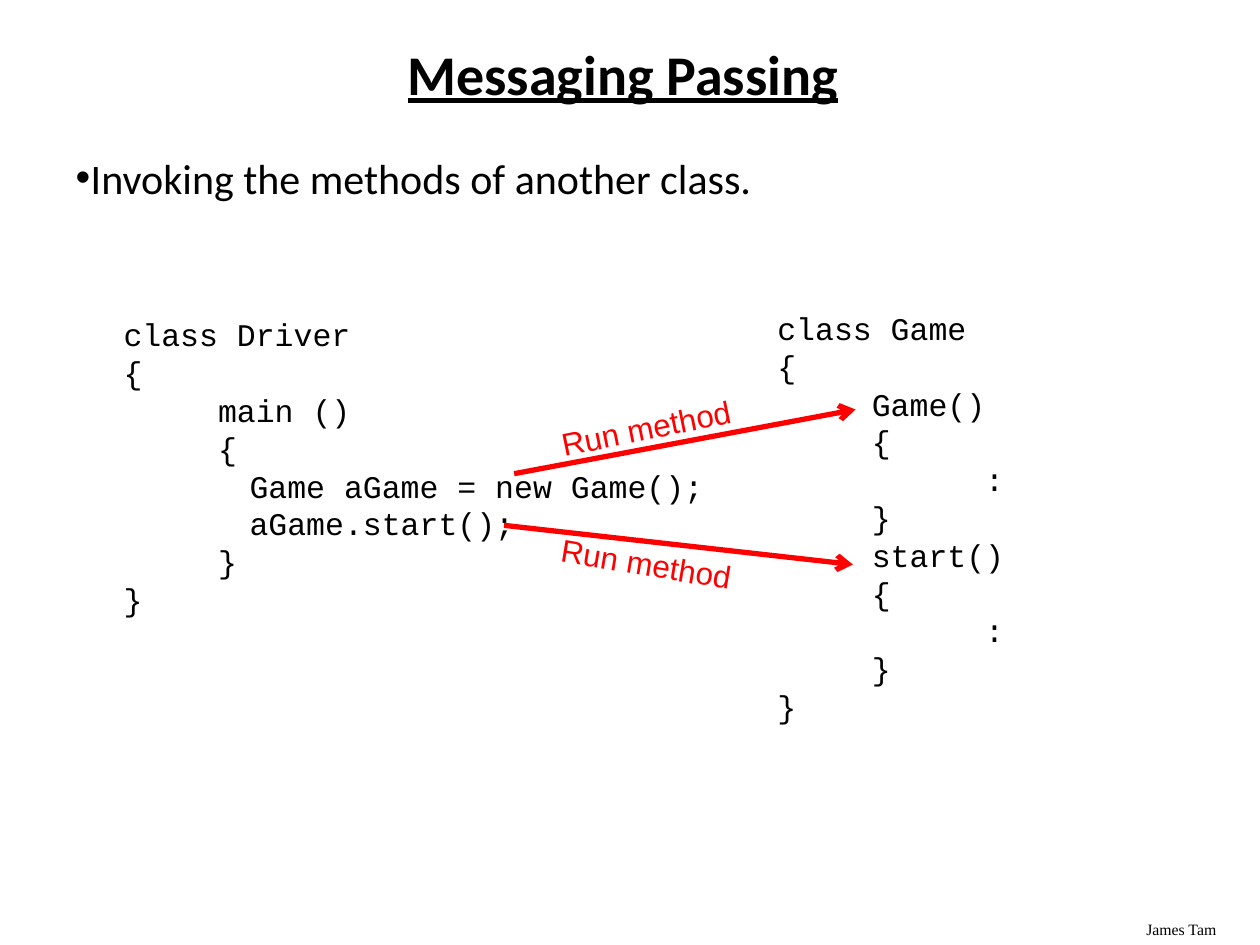
from lxml.etree import SubElement
from pptx import Presentation
from pptx.dml.color import RGBColor
from pptx.enum.shapes import MSO_CONNECTOR
from pptx.enum.text import MSO_ANCHOR, PP_ALIGN
from pptx.oxml.ns import qn
from pptx.util import Pt

BLACK = RGBColor(0x00, 0x00, 0x00)
RED = RGBColor(0xFF, 0x00, 0x00)


def format_paragraph(paragraph, font_name, size, color=BLACK):
    paragraph.font.name = font_name
    paragraph.font.size = Pt(size)
    paragraph.font.color.rgb = color


def add_text_box(shapes, left, top, width, height, left_margin=0):
    box = shapes.add_textbox(Pt(left), Pt(top), Pt(width), Pt(height))
    box.text_frame.word_wrap = True
    box.text_frame.margin_left = Pt(left_margin)
    return box


presentation = Presentation()
presentation.slide_width = Pt(720)
presentation.slide_height = Pt(540)
slide = presentation.slides.add_slide(presentation.slide_layouts[1])

# Footer
footer = add_text_box(slide.shapes, 648, 522, 72, 18, left_margin=7.2)
footer.text_frame.text = "James Tam"
format_paragraph(footer.text_frame.paragraphs[0], "Times New Roman", 9)

# Title
title = slide.shapes.title
title.left, title.top, title.width, title.height = Pt(32), Pt(8), Pt(648), Pt(72)
title.text_frame.text = "Messaging Passing"
title.text_frame.vertical_anchor = MSO_ANCHOR.MIDDLE
paragraph = title.text_frame.paragraphs[0]
paragraph.alignment = PP_ALIGN.CENTER
paragraph.line_spacing = 0.9
paragraph.font.bold = True
paragraph.font.underline = True
format_paragraph(paragraph, "Calibri", 32)

# Bullet list
body = slide.placeholders[1]
body.left, body.top, body.width, body.height = Pt(36), Pt(89), Pt(648), Pt(60)
body.text_frame.text = "Invoking the methods of another class."
paragraph = body.text_frame.paragraphs[0]
paragraph.alignment = PP_ALIGN.LEFT
paragraph.line_spacing = 0.8
paragraph.space_before = Pt(0)
format_paragraph(paragraph, "Calibri", 24)
properties = paragraph._p.get_or_add_pPr()
properties.set("marL", str(Pt(8.64)))
properties.set("indent", str(Pt(-8.64)))
SubElement(properties, qn("a:buChar"), char="•")

# Code listings: each line has its indent in points
METHOD, STATEMENT, ELLIPSIS = 54, 72, 118.8
driver_lines = [
    (0, "class Driver"),
    (0, "{"),
    (METHOD, "main ()"),
    (METHOD, "{"),
    (STATEMENT, "Game aGame = new Game();"),
    (STATEMENT, "aGame.start();"),
    (METHOD, "}"),
    (0, "}"),
]
game_lines = [(0, "class Game"), (0, "{")]
for method in ("Game()", "start()"):
    game_lines += [(METHOD, method), (METHOD, "{"), (ELLIPSIS, ":"), (METHOD, "}")]
game_lines.append((0, "}"))

for left, top, width, lines in [
    (70.6, 174.2, 338.4, driver_lines),
    (444.2, 170.6, 246.2, game_lines),
]:
    code = add_text_box(slide.shapes, left, top, width, 260.6)
    code.text_frame.margin_top = Pt(6)
    code.text_frame.text = "\n".join(text for _, text in lines)
    for paragraph, (indent, _) in zip(code.text_frame.paragraphs, lines):
        paragraph.line_spacing = Pt(21.6)
        paragraph._p.get_or_add_pPr().set("marL", str(Pt(indent)))
        format_paragraph(paragraph, "Courier New", 18)

# Calls from Driver to Game: arrow ends, label corner, label rotation
for start, end, label_corner, rotation in [
    ((293.8, 270.7), (488.9, 234), (320.4, 227.5), 348.5),
    ((288, 300.2), (487.4, 322.6), (319.7, 309.6), 9.5),
]:
    call = slide.shapes.add_group_shape()
    arrow = call.shapes.add_connector(
        MSO_CONNECTOR.STRAIGHT, *(Pt(value) for value in start + end)
    )
    arrow.line.color.rgb = RED
    arrow.line.width = Pt(3)
    SubElement(arrow.line._get_or_add_ln(), qn("a:tailEnd"), type="arrow")
    SubElement(arrow._element.spPr, qn("a:effectLst"))

    label = add_text_box(call.shapes, *label_corner, 122.4, 33.8)
    label.rotation = rotation
    label.text_frame.text = "Run method"
    format_paragraph(label.text_frame.paragraphs[0], "Arial", 18, RED)

presentation.save("out.pptx")
